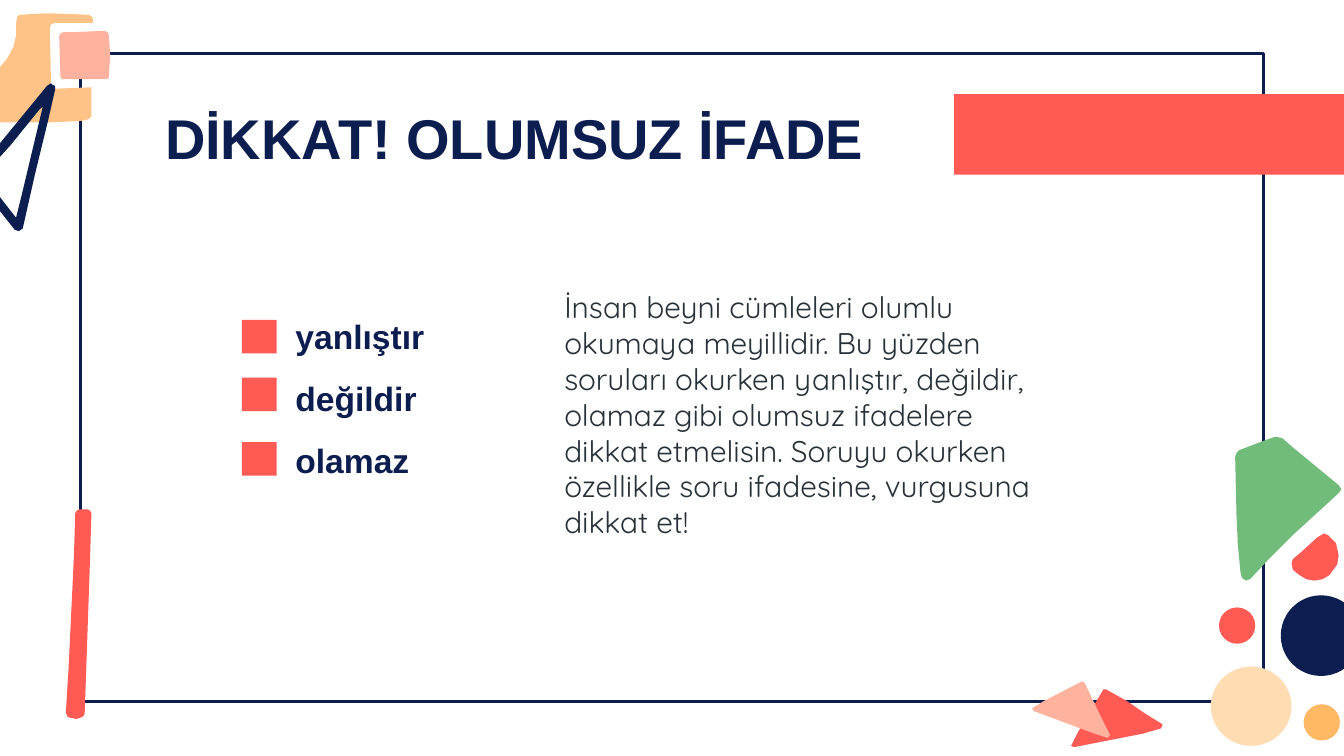
from pptx import Presentation
from pptx.dml.color import RGBColor
from pptx.enum.shapes import MSO_SHAPE
from pptx.enum.text import MSO_ANCHOR, PP_ALIGN
from pptx.util import Inches, Pt

RECT, OVAL = MSO_SHAPE.RECTANGLE, MSO_SHAPE.OVAL
SNIP = MSO_SHAPE.SNIP_2_DIAG_RECTANGLE
TOP, LEFT = MSO_ANCHOR.TOP, PP_ALIGN.LEFT
NAVY, RED, PINK, PEACH = "0C1E4F", "FF5A54", "FFB39F", "FFC388"
GREEN, AMBER, CREAM, SLATE = "71BC7B", "FFB864", "FFDCB2", "263238"


def color(code):
    return RGBColor.from_string(code)


class Deck:
    head = {"name": "Arial", "bold": True}
    body = {"name": "Quicksand", "bold": False}
    frame = {"word_wrap": True, "vertical_anchor": TOP}
    inset = 0.1

    def __init__(self, wide, high):
        self.prs = Presentation()
        self.prs.slide_width, self.prs.slide_height = Inches(wide), Inches(high)
        self.slide = self.prs.slides.add_slide(self.prs.slide_layouts[6])

    def paint(self, shape, fill):
        shape.shadow.inherit = False
        shape.fill.solid()
        shape.fill.fore_color.rgb = color(fill)
        shape.line.fill.background()

    def shape(self, kind, box, fill):
        item = self.slide.shapes.add_shape(kind, *map(Inches, box))
        self.paint(item, fill)

    def border(self, box, line, width):
        item = self.slide.shapes.add_shape(SNIP, *map(Inches, box))
        item.shadow.inherit = False
        item.fill.background()
        item.line.color.rgb = color(line)
        item.line.width = Pt(width)
        for i in range(2):
            item.adjustments[i] = 0

    def form(self, fill, *loops):
        pen = None
        for loop in loops:
            start, *rest = [(Inches(x), Inches(y)) for x, y in loop]
            if pen:
                pen.move_to(*start)
            else:
                pen = self.slide.shapes.build_freeform(*start)
            pen.add_line_segments(rest, close=True)
        self.paint(pen.convert_to_shape(), fill)

    def text(self, words, box, size, ink, face):
        frame = self.slide.shapes.add_textbox(*map(Inches, box)).text_frame
        for key, val in self.frame.items():
            setattr(frame, key, val)
        for side in ("left", "top", "right", "bottom"):
            setattr(frame, "margin_" + side, Inches(self.inset))
        para = frame.paragraphs[0]
        para.alignment = LEFT
        run = para.add_run()
        run.text = words
        for key, val in {**face, "size": Pt(size)}.items():
            setattr(run.font, key, val)
        run.font.color.rgb = color(ink)


def corner(deck):
    deck.form(PINK, [
        (0.78, 0.23), (0.53, 0.24), (0.47, 0.24), (0.45, 0.25), (0.44, 0.27),
        (0.45, 0.57), (0.46, 0.59), (0.48, 0.59), (0.79, 0.59), (0.81, 0.58),
        (0.81, 0.56), (0.82, 0.42), (0.81, 0.26), (0.8, 0.24)])
    deck.form(PEACH, [
        (0.32, 0.1), (0.15, 0.11), (0.13, 0.12), (0.12, 0.17), (0.12, 0.26),
        (0.1, 0.35), (0.05, 0.44), (-0.01, 0.51), (-0.09, 0.57), (-0.32, 0.65),
        (-0.51, 0.66), (-0.59, 0.66), (-0.6, 0.77), (-0.6, 0.87), (-0.56, 0.91),
        (0.4, 0.91), (0.6, 0.9), (0.65, 0.89), (0.67, 0.88), (0.68, 0.86),
        (0.68, 0.65), (0.42, 0.66), (0.39, 0.65), (0.38, 0.63), (0.37, 0.21),
        (0.38, 0.18), (0.41, 0.17), (0.69, 0.17), (0.69, 0.14), (0.68, 0.12),
        (0.66, 0.11), (0.41, 0.1)])


def accents(deck):
    deck.form(RED, [
        (8.65, 5.39), (8.52, 5.31), (8.39, 5.22), (8.23, 5.13), (8.21, 5.13),
        (8.02, 5.45), (7.97, 5.55), (7.99, 5.56), (8.5, 5.46), (8.64, 5.42)])
    deck.form(NAVY, [
        (0.38, 0.62), (0.35, 0.64), (-0.06, 1.14), (-0.18, 1.28), (-0.19, 1.31),
        (-0.17, 1.33), (-0.04, 1.52), (0.11, 1.71), (0.14, 1.72), (0.17, 1.7),
        (0.26, 1.3), (0.36, 0.89), (0.41, 0.67), (0.41, 0.64), (0.39, 0.63)],
        [(0.32, 0.79), (0.16, 1.46), (0.12, 1.62), (0.01, 1.48),
         (-0.12, 1.3), (0.08, 1.08), (0.29, 0.82)])
    deck.form(RED, [
        (0.65, 3.79), (0.59, 3.79), (0.57, 3.8), (0.56, 3.82), (0.55, 4.14),
        (0.51, 4.98), (0.49, 5.3), (0.5, 5.33), (0.52, 5.34), (0.57, 5.35),
        (0.6, 5.34), (0.62, 5.33), (0.63, 5.31), (0.64, 5.02), (0.67, 4.15),
        (0.68, 3.82), (0.67, 3.8)])
    deck.form(PINK, [
        (8.26, 5.47), (8.2, 5.35), (8.07, 5.08), (8.05, 5.07), (7.76, 5.22),
        (7.68, 5.27), (7.69, 5.29), (8.12, 5.45), (8.24, 5.49)])


def pebbles(deck):
    for fill, box in (
            (NAVY, (9.53, 4.43, 0.6, 0.6)), (RED, (9.07, 4.52, 0.27, 0.27)),
            (AMBER, (9.7, 5.24, 0.27, 0.27)), (CREAM, (9.01, 4.96, 0.6, 0.59))):
        deck.shape(OVAL, box, fill)
    deck.form(GREEN, [
        (9.49, 3.25), (9.43, 3.27), (9.22, 3.35), (9.2, 3.37), (9.19, 3.4),
        (9.2, 3.83), (9.21, 4.05), (9.23, 4.26), (9.24, 4.3), (9.27, 4.32),
        (9.3, 4.31), (9.32, 4.29), (9.45, 4.15), (9.61, 3.99), (9.96, 3.67),
        (9.98, 3.64), (9.96, 3.61), (9.62, 3.33), (9.54, 3.26)])
    deck.form(RED, [
        (9.85, 3.97), (9.8, 4), (9.68, 4.11), (9.62, 4.16), (9.61, 4.19),
        (9.62, 4.24), (9.67, 4.28), (9.72, 4.31), (9.78, 4.32), (9.84, 4.31),
        (9.89, 4.28), (9.95, 4.2), (9.96, 4.13), (9.94, 4.04), (9.88, 3.98)])


def main():
    deck = Deck(10, 10 * 9 / 16)
    deck.border((0.6, 0.4, 8.8, 4.82), NAVY, 1.5)
    corner(deck)
    accents(deck)
    pebbles(deck)
    deck.text("DİKKAT! OLUMSUZ İFADE", (1.13, 0.67, 8.13, 0.6), 30, NAVY, deck.head)
    deck.shape(RECT, (7.1, 0.7, 3, 0.6), RED)
    for word, high, mark in (("yanlıştır", 2.25, 2.38), ("değildir", 2.71, 2.81),
                             ("olamaz", 3.17, 3.29)):
        deck.shape(RECT, (1.8, mark, 0.26, 0.25), RED)
        deck.text(word, (2.1, high, 3, 0.25), 18, NAVY, deck.head)
    deck.text(
        "İnsan beyni cümleleri olumlu okumaya meyillidir. Bu yüzden soruları "
        "okurken yanlıştır, değildir, olamaz gibi olumsuz ifadelere dikkat "
        "etmelisin. Soruyu okurken özellikle soru ifadesine, vurgusuna dikkat et!",
        (4.1, 2.05, 3.79, 1.82), 16, SLATE, deck.body)
    deck.prs.save("out.pptx")


if __name__ == "__main__":
    main()
